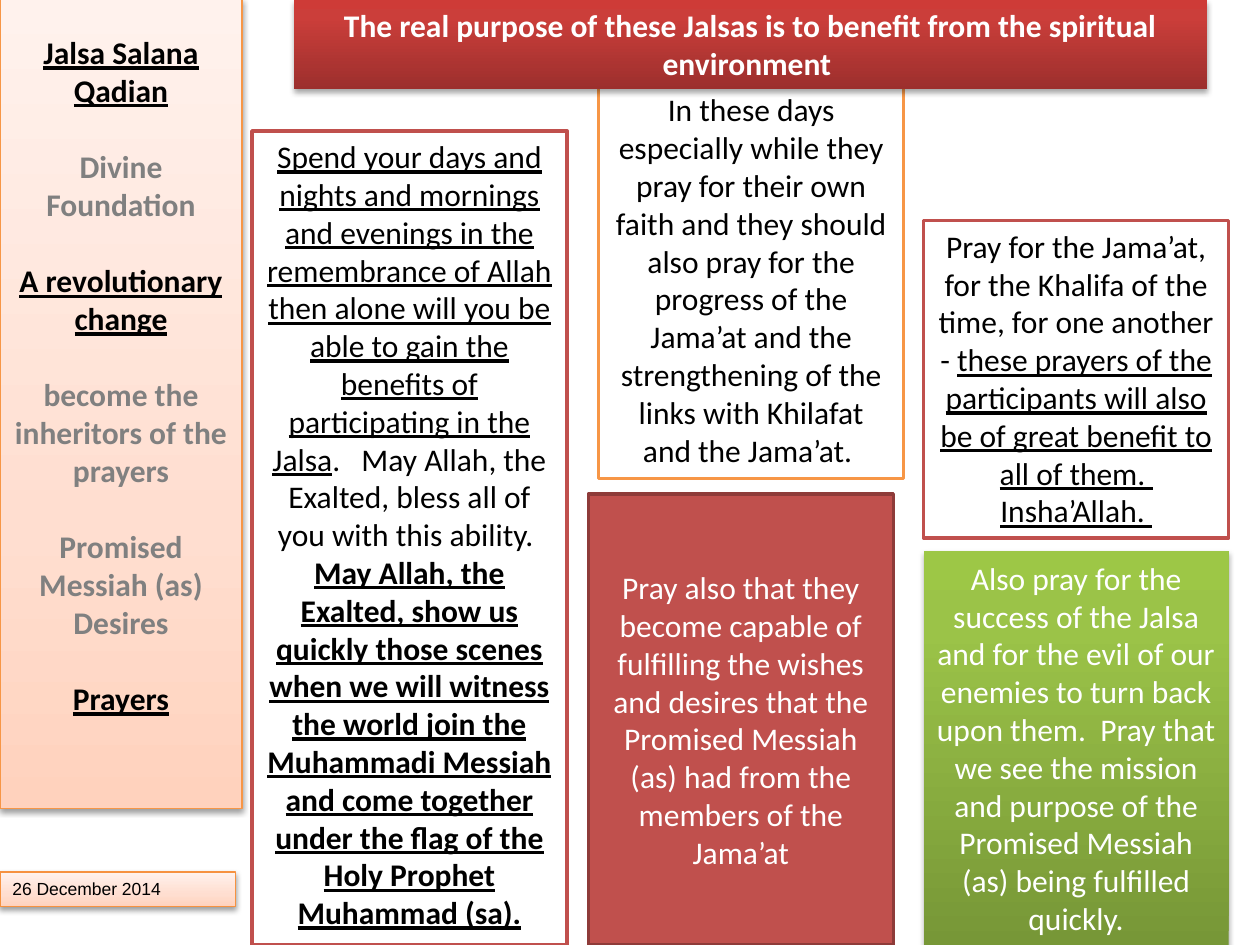
from copy import deepcopy

from lxml import etree
from pptx import Presentation
from pptx.dml.color import RGBColor
from pptx.enum.shapes import MSO_SHAPE
from pptx.enum.text import MSO_ANCHOR, MSO_AUTO_SIZE, PP_ALIGN
from pptx.oxml.ns import qn
from pptx.util import Cm, Pt

RECT = MSO_SHAPE.RECTANGLE
TOP, MIDDLE = MSO_ANCHOR.TOP, MSO_ANCHOR.MIDDLE
LEFT, CENTER = PP_ALIGN.LEFT, PP_ALIGN.CENTER
NO_AUTOFIT = MSO_AUTO_SIZE.NONE
TITLE_ONLY = 5

WHITE, BLACK, GREY = "FFFFFF", "000000", "808080"
RED, ORANGE = "C0504D", "F79646"
PEACH_FADE = [(0, "FFD2BD"), (0.35, "FFDED0"), (1, "FFF2ED")]
GREEN_FADE = [(0, "779737"), (0.8, "9BC348"), (1, "9DC746")]
RED_FADE = [(0, "9C2F2D"), (0.8, "CB3E3A"), (1, "CE3B37")]

UNDERLINED = {"underline": True}
STRONG = {"bold": True, "underline": True}

TITLE = "The real purpose of these Jalsas is to benefit from the spiritual environment "
DATE = "26 December 2014"
# (text, is highlighted)
TOPICS = [
    ("Jalsa Salana Qadian", True),
    ("Divine Foundation", False),
    ("A revolutionary change", True),
    ("become the inheritors of the prayers", False),
    ("Promised Messiah (as) Desires", False),
    ("Prayers", True),
]
# box in cm, fill, line, anchor, text colour, runs
CARDS = [
    ((18.62, 11.1, 6.15, 7.95), GREEN_FADE, None, MIDDLE, WHITE, [
        ("Also pray for the success of the Jalsa and for the evil of our enemies to turn "
         "back upon them.  Pray that we see the mission and purpose of the Promised "
         "Messiah (as) being fulfilled quickly.", {})]),
    ((18.62, 4.45, 6.15, 6.4), WHITE, RED, TOP, BLACK, [
        ("Pray for the Jama’at, for the Khalifa of the time, for one another - ", {}),
        ("these prayers of the participants will also be of great benefit to all of "
         "them.  Insha’Allah. ", UNDERLINED)]),
    ((12.07, 1.7, 6.15, 7.95), WHITE, ORANGE, TOP, BLACK, [
        ("In these days especially while they pray for their own faith and they should "
         "also pray for the progress of the Jama’at and the strengthening of the links "
         "with Khilafat and the Jama’at. ", {})]),
    ((5.08, 2.64, 6.35, 16.41), WHITE, RED, TOP, BLACK, [
        ("Spend your days and nights and mornings and evenings in the remembrance of "
         "Allah then alone will you be able to gain the benefits of participating in "
         "the Jalsa", UNDERLINED),
        (".   May Allah, the Exalted, bless all of you with this ability.  ", {}),
        ("May Allah, the Exalted, show us quickly those scenes when we will witness the "
         "world join the Muhammadi Messiah and come together under the flag of the Holy "
         "Prophet Muhammad (sa).", STRONG)]),
    ((11.86, 9.96, 6.15, 9.09), RED, "8E3B39", MIDDLE, WHITE, [
        ("Pray also that they become capable of fulfilling the wishes and desires that "
         "the Promised Messiah (as) had from the members of the Jama’at", {})]),
]


def rgb(value):
    return RGBColor.from_string(value)


def set_fill(sp, fill):
    """Fill with one colour, or with a list of stops running from bottom to top."""
    if isinstance(fill, str):
        sp.fill.solid()
        sp.fill.fore_color.rgb = rgb(fill)
        return
    sp.fill.gradient()
    sp.fill.gradient_angle = 90
    gs_list = sp._element.spPr.find(".//" + qn("a:gsLst"))
    while len(gs_list) < len(fill):
        gs_list.append(deepcopy(gs_list[0]))
    for stop, (position, color) in zip(sp.fill.gradient_stops, fill):
        stop.position = position
        stop.color.rgb = rgb(color)


def set_line(sp, color, width):
    if color is None:
        sp.line.fill.background()
    else:
        sp.line.color.rgb = rgb(color)
        sp.line.width = Pt(width)


def add_shadow(sp, opacity):
    effects = sp._element.spPr.find(qn("a:effectLst"))
    shadow = etree.SubElement(effects, qn("a:outerShdw"), blurRad="40000", dist="22000",
                              dir="5400000", rotWithShape="0")
    color = etree.SubElement(shadow, qn("a:srgbClr"), val=BLACK)
    etree.SubElement(color, qn("a:alpha"), val=str(opacity * 1000))


def style_box(sp, box, fill, line=None, width=2, anchor=TOP, opacity=0):
    sp.left, sp.top, sp.width, sp.height = (Cm(v) for v in box)
    set_fill(sp, fill)
    set_line(sp, line, width)
    sp.shadow.inherit = False
    if opacity:
        add_shadow(sp, opacity)
    tf = sp.text_frame
    formats = {"word_wrap": True, "auto_size": NO_AUTOFIT, "vertical_anchor": anchor}
    for name, value in formats.items():
        setattr(tf, name, value)
    return tf


def write(p, runs, color, size=18, font="Calibri", align=CENTER):
    p.alignment = align
    for text, extra in runs:
        r = p.add_run()
        r.text = text
        for name, value in {"name": font, "size": Pt(size), **extra}.items():
            setattr(r.font, name, value)
        r.font.color.rgb = rgb(color)


def add_card(slide, box, fill, line, anchor, color, runs):
    sp = slide.shapes.add_shape(RECT, 0, 0, 0, 0)
    opacity = 0 if isinstance(fill, str) else 35
    tf = style_box(sp, box, fill, line, anchor=anchor, opacity=opacity)
    write(tf.paragraphs[0], runs, color)


def add_sidebar(slide, box):
    sp = slide.shapes.add_shape(RECT, 0, 0, 0, 0)
    tf = style_box(sp, box, PEACH_FADE, ORANGE, 0.75, opacity=38)
    tf.margin_top = Cm(0.7)
    for i, (topic, highlighted) in enumerate(TOPICS):
        p = tf.add_paragraph() if i else tf.paragraphs[0]
        p.space_before = Pt(22 if i else 0)
        write(p, [(topic, {"bold": True, "underline": highlighted})],
              BLACK if highlighted else GREY)


def add_date(slide, box):
    sp = slide.shapes.add_shape(RECT, 0, 0, 0, 0)
    tf = style_box(sp, box, PEACH_FADE, "F69240", 0.75, opacity=38)
    write(tf.paragraphs[0], [(DATE, {})], BLACK, 10, "Arial", LEFT)


def place_title(slide, box):
    """Turn the title into a banner in front of the cards."""
    sp = slide.shapes.title
    slide.shapes._spTree.append(sp._element)
    tf = style_box(sp, box, RED_FADE, opacity=35)
    write(tf.paragraphs[0], [(TITLE, {"bold": True})], WHITE)


def main():
    prs = Presentation()
    prs.slide_width, prs.slide_height = Cm(25.4), Cm(19.05)
    slide = prs.slides.add_slide(prs.slide_layouts[TITLE_ONLY])
    add_sidebar(slide, (0, -0.03, 4.88, 16.33))
    add_date(slide, (0, 17.58, 4.75, 0.69))
    for card in CARDS:
        add_card(slide, *card)
    place_title(slide, (5.92, 0, 18.42, 1.8))
    prs.save("out.pptx")


if __name__ == "__main__":
    main()
